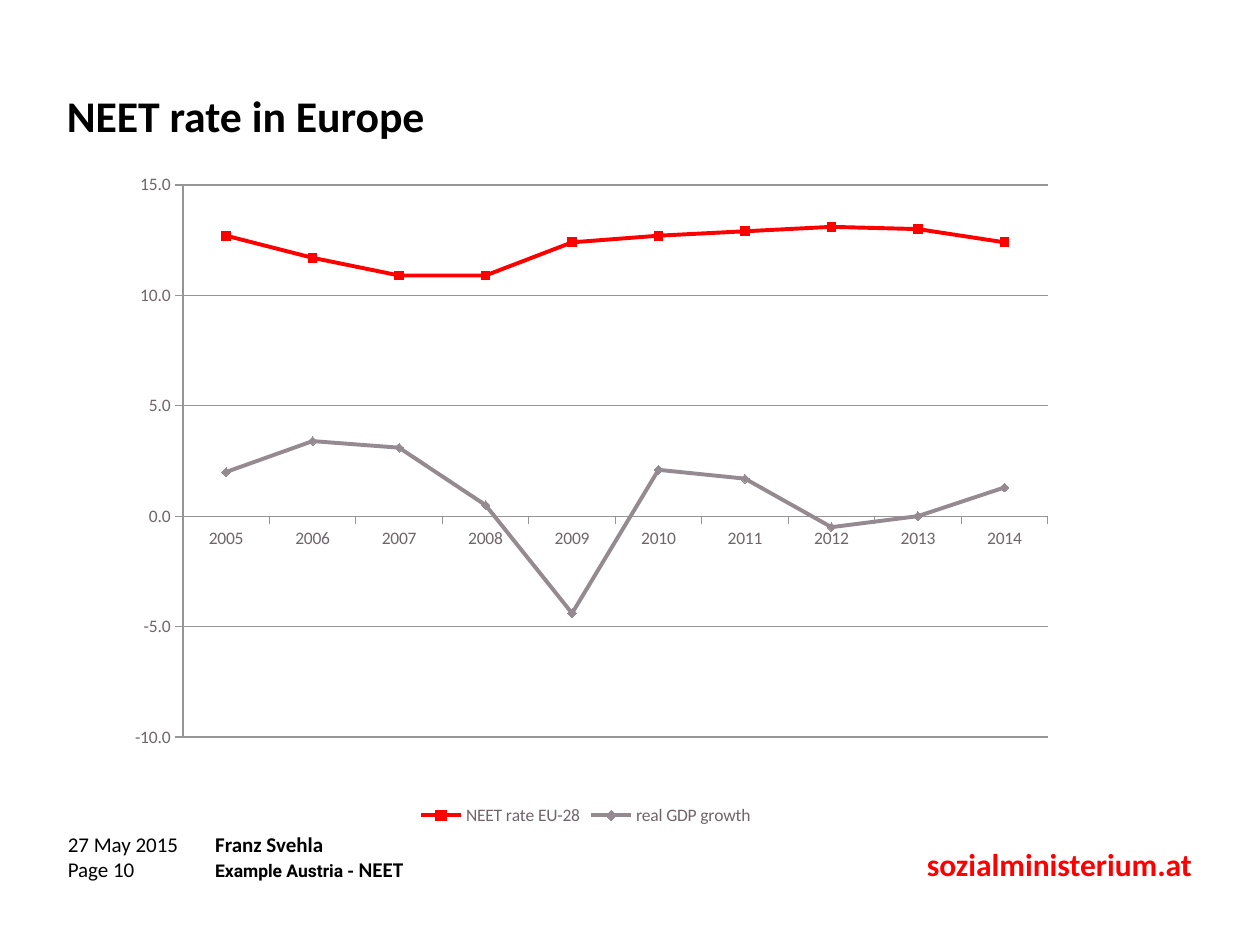
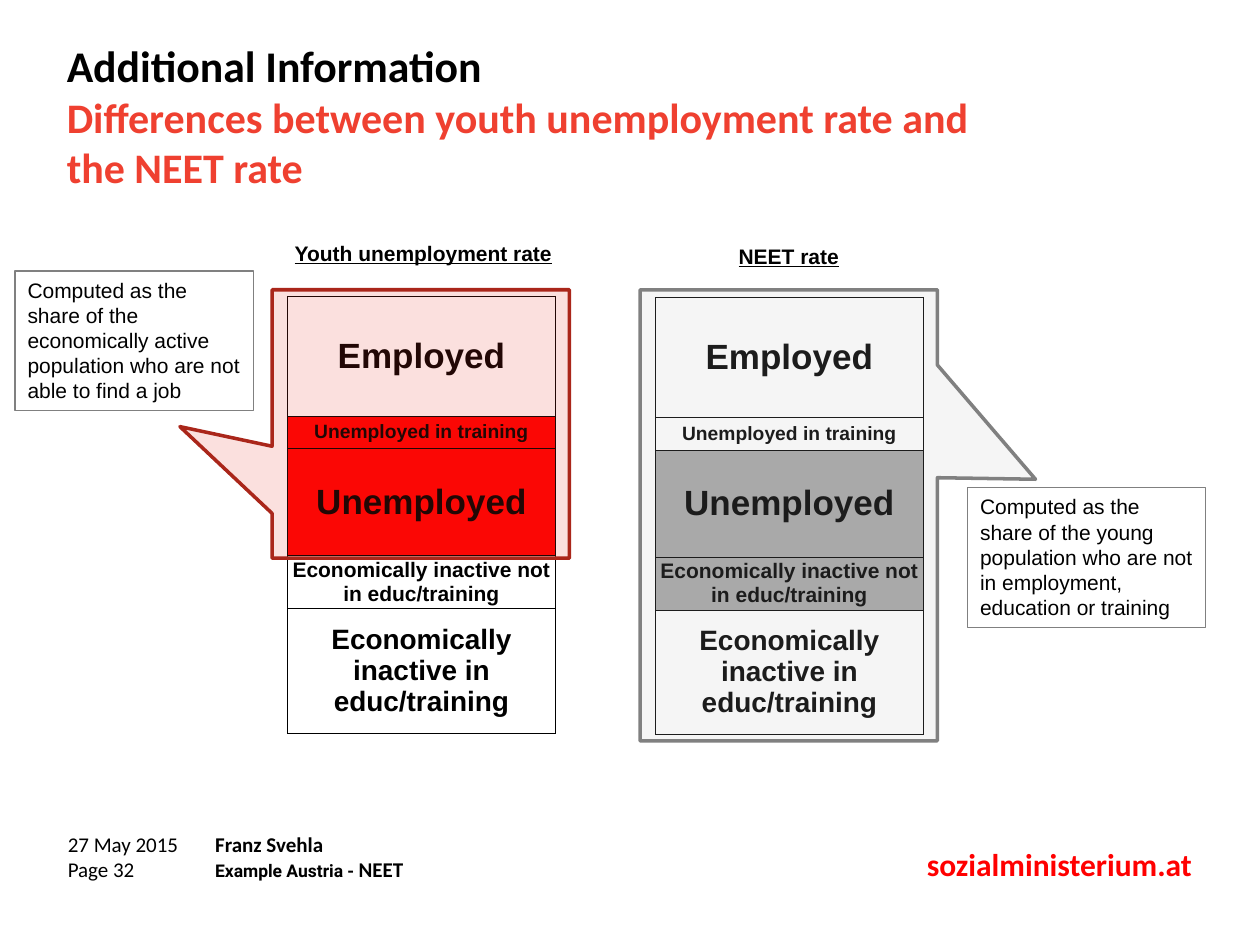
"""Build two slides on the NEET rate: a line chart and a comparison of two rates."""
from lxml import etree
from pptx import Presentation
from pptx.chart.data import CategoryChartData as ChartData
from pptx.dml.color import RGBColor as RGB
from pptx.enum.chart import XL_CHART_TYPE as Kind, XL_LEGEND_POSITION as Legend, XL_TICK_MARK as Tick
from pptx.enum.shapes import MSO_SHAPE as Shape
from pptx.enum.text import MSO_ANCHOR as Anchor, MSO_AUTO_SIZE as Fit, PP_ALIGN as Align
from pptx.oxml import parse_xml
from pptx.oxml.ns import nsdecls, qn
from pptx.util import Inches, Pt

COLORS = {
    "black": "000000", "red": "FF0000", "coral": "EF4030", "label": "6F656B",
    "taupe": "958A90", "axis": "959595", "gray": "808080", "shade": "A6A6A6",
    "silver": "BFBFBF", "scarlet": "E63323", "brick": "AA261A",
}


class Deck:
    """Holds the shared style and the slide being built."""

    def __init__(self):
        self.prs = Presentation()
        self.prs.slide_width, self.prs.slide_height = Inches(10), Inches(7.5)
        self.slide = None

    def color(self, name):
        return RGB.from_string(COLORS[name])

    def style(self, font, size, face="Arial", color="black", bold=False):
        font.size, font.name, font.bold = Pt(size), face, bold
        font.color.rgb = self.color(color)

    def stroke(self, line, color, width):
        line.color.rgb = self.color(color)
        line.width = Pt(width)

    def start(self, title, page):
        self.slide = self.prs.slides.add_slide(self.prs.slide_layouts[5])
        self.footer(page)
        head = self.slide.shapes.title
        head.left, head.top, head.width, head.height = map(Inches, (0.43, 0.44, 7.72, 0.95))
        frame = head.text_frame
        frame.text = title
        frame.auto_size, frame.vertical_anchor = Fit.NONE, Anchor.MIDDLE
        para = frame.paragraphs[0]
        para.alignment = Align.LEFT
        looks = ((25, "black"), (24, "coral"))
        for run, (size, color) in zip(para.runs, looks):
            self.style(run.font, size, "Calibri", color, True)

    def text(self, at, words, size=12, face="Arial", color="black", bold=False,
             align=Align.LEFT, under=False):
        box = self.slide.shapes.add_textbox(*map(Inches, at))
        frame = box.text_frame
        frame.word_wrap = True
        frame.text = words
        for para in frame.paragraphs:
            para.alignment = align
            for run in para.runs:
                self.style(run.font, size, face, color, bold)
                run.font.underline = under
        return frame

    def footer(self, page):
        self.text((7.12, 6.66, 2.44, 0.4), "sozialministerium.at", 18, "Calibri", "red",
                  True, Align.RIGHT)
        frame = self.text((1.61, 6.55, 5.43, 0.52), "Franz Svehla\nExample Austria - ",
                          12, "Calibri", bold=True)
        last = frame.paragraphs[1]
        self.style(last.runs[0].font, 10, "Roboto", bold=True)
        run = last.add_run()
        run.text = "NEET"
        self.style(run.font, 12, "Calibri", bold=True)
        self.text((0.44, 6.55, 1.23, 0.52), f"27 May 2015\nPage {page}", 12, "Calibri")

    def chart(self, at, cats, series, plot):
        data = ChartData(number_format="0.0")
        data.categories = cats
        for name, vals, _ in series:
            data.add_series(name, vals)
        chart = self.slide.shapes.add_chart(Kind.LINE, *map(Inches, at), data).chart
        self.style(chart.font, 10, "Calibri", "label")
        chart.has_title = False
        chart.has_legend = True
        chart.legend.position = Legend.BOTTOM
        chart.legend.include_in_layout = False
        chart.plots[0].vary_by_categories = False
        for line, (_, _, color) in zip(chart.plots[0].series, series):
            line.smooth = False
            line.marker.style = None
            self.stroke(line.format.line, color, 2.25)
        for axis in (chart.category_axis, chart.value_axis):
            axis.major_tick_mark, axis.minor_tick_mark = Tick.OUTSIDE, Tick.NONE
            self.stroke(axis.format.line, "axis", 0.75)
        axis = chart.value_axis
        axis.minimum_scale, axis.maximum_scale, axis.major_unit = -10, 15, 5
        axis.has_major_gridlines = True
        self.stroke(axis.major_gridlines.format.line, "axis", 0.75)
        axis.tick_labels.number_format = "#,##0.0"
        axis.tick_labels.number_format_is_linked = False
        self.place(chart, plot)

    def place(self, chart, plot):
        area = chart._chartSpace.chart.plotArea
        for old in area.findall(qn("c:layout")):
            area.remove(old)
        rows = [("layoutTarget", "inner"), ("xMode", "edge"), ("yMode", "edge")]
        rows += zip("xywh", plot)
        body = "".join(f'<c:{tag} val="{val}"/>' for tag, val in rows)
        area.insert(0, parse_xml(f'<c:layout {nsdecls("c")}><c:manualLayout>{body}'
                                 "</c:manualLayout></c:layout>"))

    def table(self, left, top, rows, fills):
        high = sum(row[2] for row in rows)
        grid = self.slide.shapes.add_table(
            len(rows), 1, *map(Inches, (left, top, 2.13, high))).table
        grid.first_row = grid.horz_banding = False
        for i, (words, size, tall) in enumerate(rows):
            grid.rows[i].height = Inches(tall)
            cell = grid.cell(i, 0)
            cell.margin_left = cell.margin_right = cell.margin_top = cell.margin_bottom = 0
            cell.vertical_anchor = Anchor.MIDDLE
            cell.text = words
            para = cell.text_frame.paragraphs[0]
            para.alignment = Align.CENTER
            self.style(para.runs[0].font, size, bold=True)
            if i in fills:
                cell.fill.solid()
                cell.fill.fore_color.rgb = self.color(fills[i])
            else:
                cell.fill.background()
            self.border(cell)

    def border(self, cell):
        for i, side in enumerate("LRTB"):
            cell._tc.get_or_add_tcPr().insert(i, parse_xml(
                f'<a:ln{side} {nsdecls("a")} w="{Pt(0.25)}"><a:solidFill>'
                f'<a:srgbClr val="{COLORS["black"]}"/></a:solidFill></a:ln{side}>'))

    def shape(self, kind, at, line, width):
        item = self.slide.shapes.add_shape(kind, *map(Inches, at))
        item.shadow.inherit = False
        item.fill.background()
        self.stroke(item.line, line, width)
        return item

    def callout(self, at, tip, fill, line):
        item = self.shape(Shape.RECTANGULAR_CALLOUT, at, line, 2)
        item.adjustments[0], item.adjustments[1] = tip
        item.fill.solid()
        item.fill.fore_color.rgb = self.color(fill)
        tint = item._element.spPr.find(qn("a:solidFill"))[0]
        etree.SubElement(tint, qn("a:alpha"), val="15000")

    def note(self, left, top, words):
        at = (left, top, 1.89, 1.11)
        self.shape(Shape.RECTANGLE, at, "gray", 0.75)
        self.text(at, words)


def main():
    deck = Deck()
    deck.start("NEET rate in Europe", 10)
    deck.chart(
        (0.75, 1.31, 7.8, 5.28), [str(year) for year in range(2005, 2015)],
        [("NEET rate EU-28",
          (12.7, 11.7, 10.9, 10.9, 12.4, 12.7, 12.9, 13.1, 13, 12.4), "red"),
         ("real GDP growth",
          (2, 3.4, 3.1, 0.5, -4.4, 2.1, 1.7, -0.5, 0, 1.3), "taupe")],
        (0.09, 0.03, 0.88, 0.83))

    deck.start("Additional Information\vDifferences between youth unemployment rate "
               "and the NEET rate", 32)
    rows = [("Employed", 20, 0.95), ("Unemployed in training", 11, 0.26),
            ("Unemployed", 20, 0.85), ("Economically inactive not in educ/training", 12, 0.42),
            ("Economically inactive in educ/training", 16, 0.99)]
    deck.table(2.28, 2.35, rows, {1: "red", 2: "red"})
    deck.callout((2.16, 2.3, 2.36, 2.13), (-0.81, 0.01), "scarlet", "brick")
    deck.note(0.12, 2.15, "Computed as the share of the economically active population "
              "who are not able to find a job")
    deck.text((2.24, 1.86, 2.36, 0.3), "Youth unemployment rate", bold=True, under=True)
    deck.table(5.2, 2.36, rows, {2: "shade", 3: "shade"})
    deck.callout((5.08, 2.3, 2.36, 3.58), (0.83, -0.08), "silver", "gray")
    deck.note(7.68, 3.87, "Computed as the share of the young population who are not in "
              "employment, education or training")
    deck.text((5.16, 1.88, 2.2, 0.3), "NEET rate", bold=True, align=Align.CENTER, under=True)
    deck.prs.save("out.pptx")


if __name__ == "__main__":
    main()
